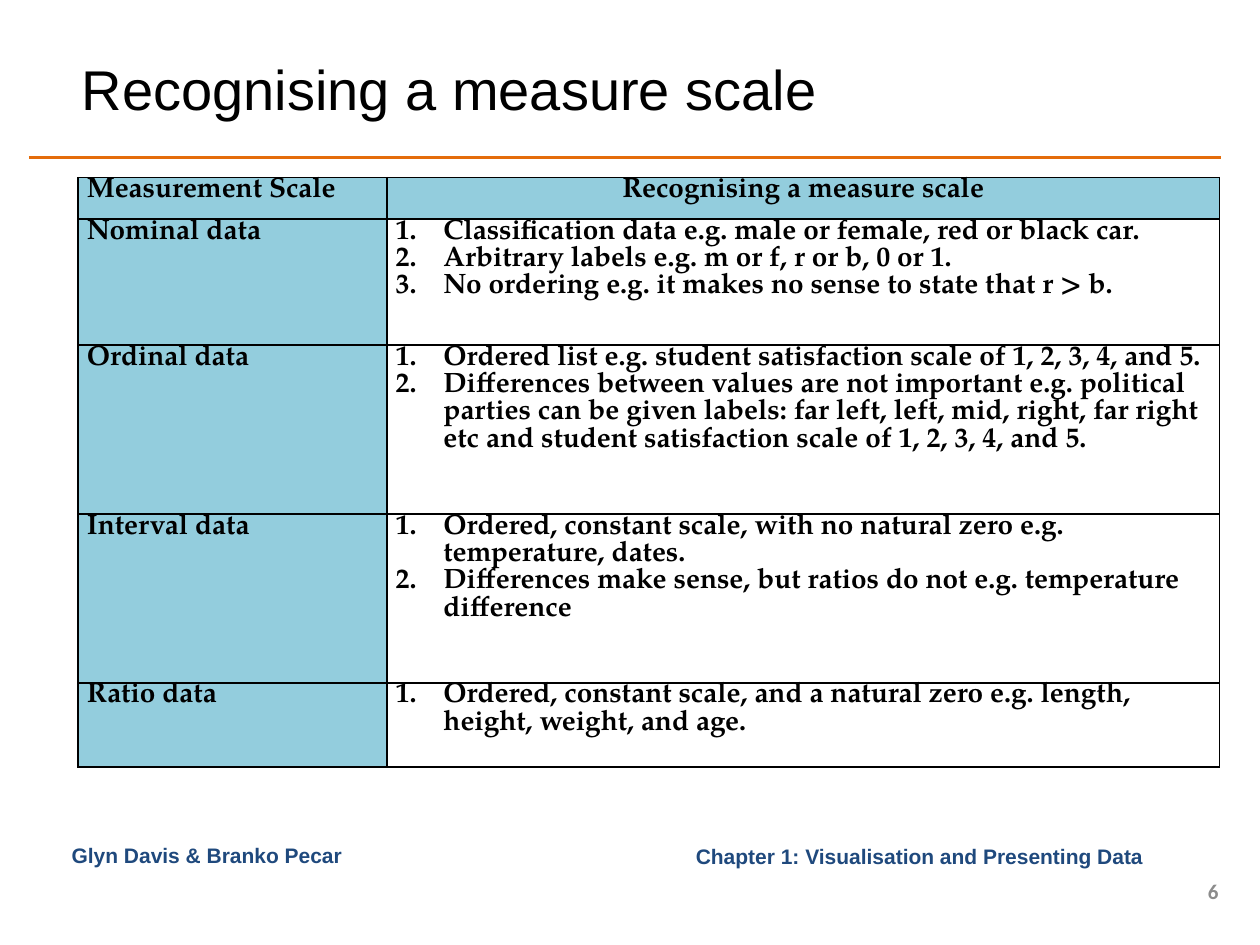
from lxml import etree
from pptx import Presentation
from pptx import util as u
from pptx.dml.color import RGBColor
from pptx.enum import shapes, text
from pptx.oxml import ns

BLACK = RGBColor(0x00, 0x00, 0x00)
ORANGE = RGBColor(0xE4, 0x6C, 0x0A)
NAVY = RGBColor(0x1F, 0x49, 0x7D)
GREY = RGBColor(0x8C, 0x8C, 0x8C)
LIGHT_BLUE = RGBColor(0x93, 0xCD, 0xDD)

TITLE = "Recognising a measure scale"
HEADINGS = ["Measurement Scale", TITLE]
SCALES = [
    ("Nominal data", [
        "Classification data e.g. male or female, red or black car.",
        "Arbitrary labels e.g. m or f, r or b, 0 or 1.",
        "No ordering e.g. it makes no sense to state that r > b.",
    ]),
    ("Ordinal data", [
        "Ordered list e.g. student satisfaction scale of 1, 2, 3, 4, and 5.",
        "Differences between values are not important e.g. political parties can be "
        "given labels: far left, left, mid, right, far right etc and student "
        "satisfaction scale of 1, 2, 3, 4, and 5.",
    ]),
    ("Interval data", [
        "Ordered, constant scale, with no natural zero e.g. temperature, dates.",
        "Differences make sense, but ratios do not e.g. temperature difference",
    ]),
    ("Ratio data", [
        "Ordered, constant scale, and a natural zero e.g. length, height, weight, and age.",
    ]),
]
COLUMN_WIDTHS = [2.45, 6.61]
ROW_HEIGHTS = [0.33, 1, 1.34, 1.34, 0.67]


def set_font(paragraph, name, size, color, bold=False):
    font = paragraph.font
    font.name, font.size, font.bold = name, u.Pt(size), bold
    font.color.rgb = color


def add_title(slide):
    title = slide.shapes.title
    title.left, title.top = u.Inches(0.55), u.Inches(0.31)
    title.width, title.height = u.Inches(7.58), u.Inches(0.78)
    title.text_frame.text = TITLE
    title.text_frame.vertical_anchor = text.MSO_ANCHOR.MIDDLE
    paragraph = title.text_frame.paragraphs[0]
    paragraph.alignment = text.PP_ALIGN.LEFT
    set_font(paragraph, "Arial", 32, BLACK)


def add_rule(slide):
    rule = slide.shapes.add_connector(
        shapes.MSO_CONNECTOR.STRAIGHT,
        u.Inches(0.23), u.Inches(1.25), u.Inches(9.69), u.Inches(1.25))
    rule.line.color.rgb = ORANGE
    rule.line.width = u.Pt(2)
    etree.SubElement(rule._element.spPr, ns.qn("a:effectLst"))


def add_label(slide, wording, box, color, font_name="Arial",
              alignment=text.PP_ALIGN.RIGHT, anchor=text.MSO_ANCHOR.MIDDLE):
    label = slide.shapes.add_textbox(*map(u.Inches, box))
    frame = label.text_frame
    frame.word_wrap = True
    frame.vertical_anchor = anchor
    frame.text = wording
    frame.paragraphs[0].alignment = alignment
    set_font(frame.paragraphs[0], font_name, 12, color, bold=True)


def add_borders(cell):
    properties = cell._tc.get_or_add_tcPr()
    for index, side in enumerate(("a:lnL", "a:lnR", "a:lnT", "a:lnB")):
        line = etree.Element(ns.qn(side), w=str(u.Pt(1)))
        fill = etree.SubElement(line, ns.qn("a:solidFill"))
        etree.SubElement(fill, ns.qn("a:srgbClr"), val=str(BLACK))
        properties.insert(index, line)


def number_paragraph(paragraph):
    properties = paragraph._p.get_or_add_pPr()
    properties.set("marL", str(u.Inches(0.38)))
    properties.set("indent", str(-u.Inches(0.38)))
    etree.SubElement(properties, ns.qn("a:buAutoNum"), type="arabicPeriod")


def fill_cell(cell, lines, color=None, numbered=False, alignment=text.PP_ALIGN.LEFT):
    cell.margin_left = cell.margin_right = u.Inches(0.07)
    cell.margin_top = cell.margin_bottom = 0
    if color is None:
        cell.fill.background()
    else:
        cell.fill.solid()
        cell.fill.fore_color.rgb = color
    add_borders(cell)
    cell.text_frame.text = "\n".join(lines)
    for paragraph in cell.text_frame.paragraphs:
        paragraph.alignment = alignment
        paragraph.line_spacing = u.Pt(15.6)
        if numbered:
            number_paragraph(paragraph)
        set_font(paragraph, "TeX Gyre Pagella", 16, BLACK, bold=True)


def add_scale_table(slide):
    table = slide.shapes.add_table(
        len(ROW_HEIGHTS), len(COLUMN_WIDTHS), u.Inches(0.62), u.Inches(1.41),
        u.Inches(sum(COLUMN_WIDTHS)), u.Inches(sum(ROW_HEIGHTS))).table
    table.first_row = table.horz_banding = False
    for column, width in zip(table.columns, COLUMN_WIDTHS):
        column.width = u.Inches(width)
    for row, height in zip(table.rows, ROW_HEIGHTS):
        row.height = u.Inches(height)

    # Heading row, then one row per scale
    fill_cell(table.cell(0, 0), HEADINGS[:1], LIGHT_BLUE)
    fill_cell(table.cell(0, 1), HEADINGS[1:], LIGHT_BLUE, alignment=text.PP_ALIGN.CENTER)
    for row, (scale, features) in enumerate(SCALES, start=1):
        fill_cell(table.cell(row, 0), [scale], LIGHT_BLUE)
        fill_cell(table.cell(row, 1), features, numbered=True)


def main():
    presentation = Presentation()
    presentation.slide_width, presentation.slide_height = u.Inches(10), u.Inches(7.5)
    slide = presentation.slides.add_slide(presentation.slide_layouts[0])
    subtitle = slide.placeholders[1]
    subtitle._element.getparent().remove(subtitle._element)

    # Heading
    add_rule(slide)
    add_title(slide)

    # Footer
    add_label(slide, "Chapter 1: Visualisation and Presenting Data ",
              (4.69, 6.64, 4.53, 0.31), NAVY)
    add_label(slide, "6", (9.3, 6.95, 0.47, 0.24), GREY, font_name="Calibri")
    add_label(slide, "Glyn Davis & Branko Pecar", (0.47, 6.64, 2.97, 0.31), NAVY,
              alignment=text.PP_ALIGN.LEFT, anchor=text.MSO_ANCHOR.TOP)

    # Content
    add_scale_table(slide)
    presentation.save("out.pptx")


if __name__ == "__main__":
    main()
